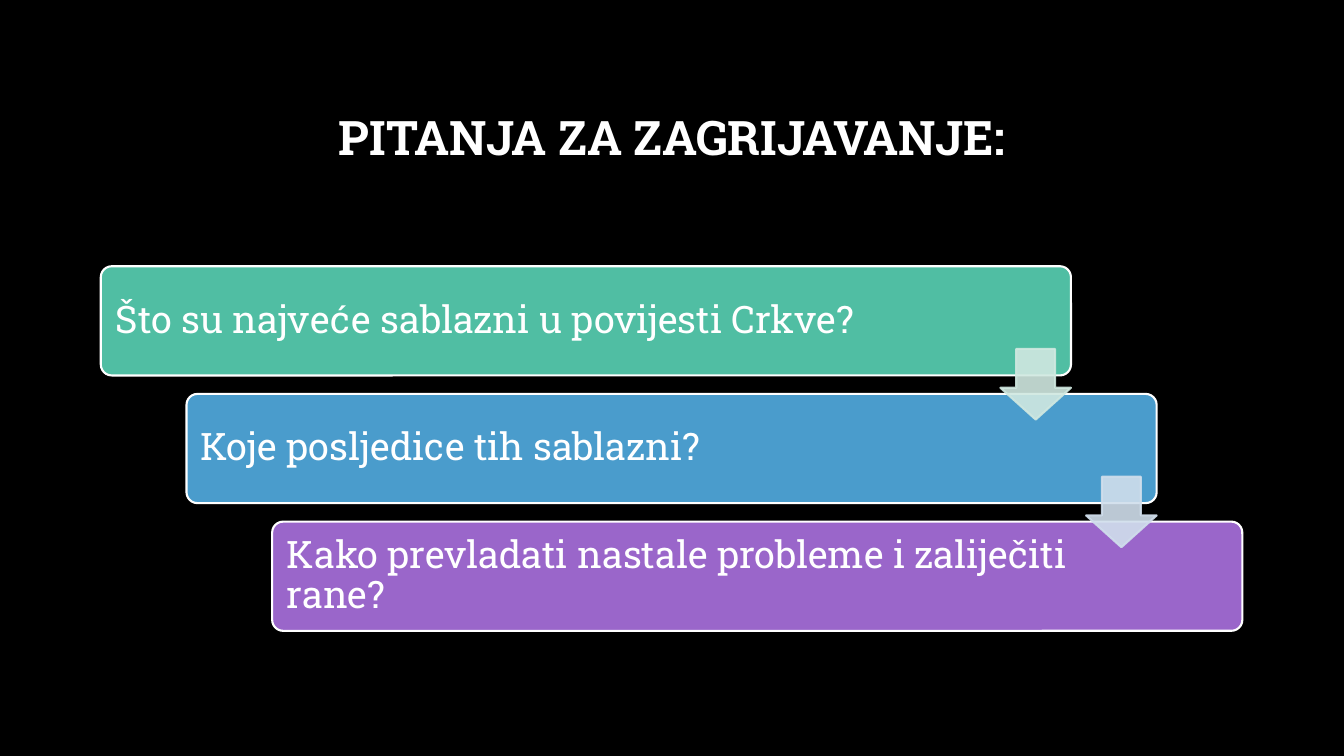
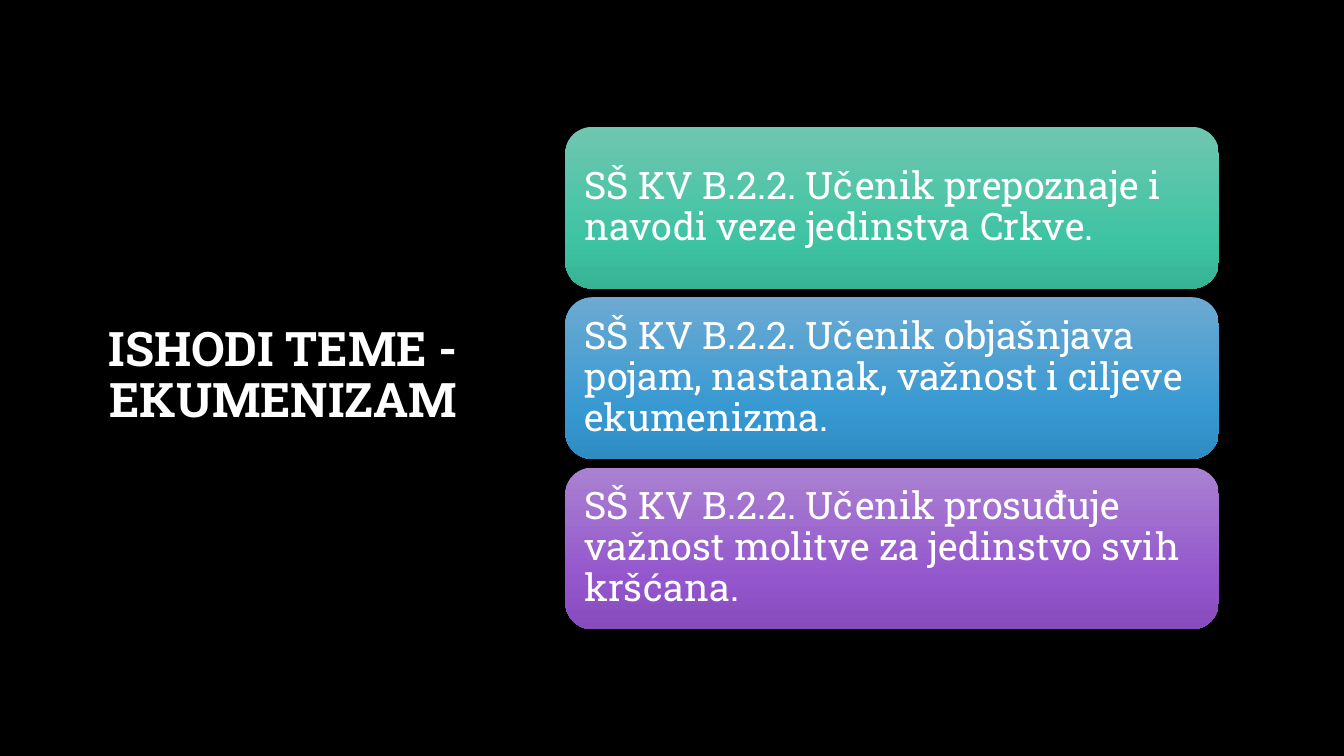
from copy import deepcopy
from dataclasses import dataclass

from lxml import etree
from pptx import Presentation
from pptx.dml.color import RGBColor
from pptx.enum.shapes import MSO_SHAPE
from pptx.enum.text import MSO_ANCHOR, PP_ALIGN
from pptx.oxml.ns import qn
from pptx.shapes.autoshape import Shape
from pptx.slide import Slide
from pptx.util import Inches, Pt

FONT = "Roboto Slab"
TITLE_SIZE, BODY_SIZE = Pt(34), Pt(27)
COLS, ROWS = 160, 90
SLIDE_W, SLIDE_H = Inches(13.33), Inches(7.5)
COL, ROW = SLIDE_W / COLS, SLIDE_H / ROWS
CARD_INSET = Pt(8)

COLORS = {
    "background": "000000", "text": "FFFFFF", "outline": "FFFFFF",
    "green": "50BEA3", "blue": "4A9CCC", "purple": "9A66CA",
    "pale green": "D0E8E0", "pale blue": "D0DEEC",
    "green top": "70C6AF", "green middle": "3EC4A3", "green bottom": "37B395",
    "blue top": "6DAAD2", "blue middle": "3799D2", "blue bottom": "2F8CC2",
    "purple top": "A981D1", "purple middle": "9456CD", "purple bottom": "864BBC",
}
GRADIENT_STOPS = {"top": 0, "middle": 0.69, "bottom": 1}


@dataclass(frozen=True)
class Box:
    """A rectangle in grid columns and rows."""
    x: float
    y: float
    w: float
    h: float

    def step(self, i: int, dx: float, dy: float) -> "Box":
        return Box(self.x + i * dx, self.y + i * dy, self.w, self.h)

    def emu(self) -> tuple[int, int, int, int]:
        return (round(self.x * COL), round(self.y * ROW),
                round(self.w * COL), round(self.h * ROW))


@dataclass(frozen=True)
class Card:
    text: str
    color: str


QUESTIONS = [
    Card("Što su najveće sablazni u povijesti Crkve?", "green"),
    Card("Koje posljedice tih sablazni?", "blue"),
    Card("Kako prevladati nastale probleme i zaliječiti rane?", "purple"),
]
OUTCOMES = [
    Card("SŠ KV B.2.2. Učenik prepoznaje i navodi veze jedinstva Crkve.", "green"),
    Card("SŠ KV B.2.2. Učenik objašnjava pojam, nastanak, važnost i ciljeve "
         "ekumenizma.", "blue"),
    Card("SŠ KV B.2.2. Učenik prosuđuje važnost molitve za jedinstvo svih "
         "kršćana.", "purple"),
]


def rgb(name: str) -> RGBColor:
    return RGBColor.from_string(COLORS[name])


def write(sp: Shape, text: str, size: Pt, align: PP_ALIGN, bold: bool = False) -> None:
    tf = sp.text_frame
    tf.word_wrap = True
    tf.vertical_anchor = MSO_ANCHOR.MIDDLE
    p = tf.paragraphs[0]
    p.text = text
    p.alignment = align
    p.line_spacing = 0.9
    p.font.name, p.font.size, p.font.bold = FONT, size, bold
    p.font.color.rgb = rgb("text")


def add_title(s: Slide, text: str, box: Box) -> None:
    write(s.shapes.add_textbox(*box.emu()), text, TITLE_SIZE, PP_ALIGN.CENTER, True)


def add_shape(s: Slide, kind: MSO_SHAPE, box: Box, *adjustments: float) -> Shape:
    sp = s.shapes.add_shape(kind, *box.emu())
    sp.shadow.inherit = False
    for i, value in enumerate(adjustments):
        sp.adjustments[i] = value
    return sp


def paint(sp: Shape, fill: str, line: str) -> None:
    sp.fill.solid()
    sp.fill.fore_color.rgb = rgb(fill)
    sp.line.color.rgb = rgb(line)
    sp.line.width = Pt(1.5)


def paint_gradient(sp: Shape, color: str) -> None:
    """Fill downwards with the three shades of a colour, without outline."""
    sp.line.fill.background()
    sp.fill.gradient()
    sp.fill.gradient_angle = 270
    stop_list = next(sp._element.spPr.iter(qn("a:gsLst")))
    stop_list.append(deepcopy(stop_list[-1]))
    for stop, (shade, position) in zip(sp.fill.gradient_stops, GRADIENT_STOPS.items()):
        stop.color.rgb = rgb(f"{color} {shade}")
        stop.position = position


def set_opacity(sp: Shape, percent: int) -> None:
    for color in sp._element.spPr.iter(qn("a:srgbClr")):
        etree.SubElement(color, qn("a:alpha"), val=str(percent * 1000))


def write_card(sp: Shape, text: str, right_inset: int = CARD_INSET) -> None:
    write(sp, text, BODY_SIZE, PP_ALIGN.LEFT)
    tf = sp.text_frame
    tf.margin_left = tf.margin_top = tf.margin_bottom = CARD_INSET
    tf.margin_right = right_inset


def build_questions(s: Slide) -> None:
    add_title(s, "PITANJA ZA ZAGRIJAVANJE:", Box(12, 8, 136, 17.4))
    first, dx, dy = Box(12, 31.7, 115.5, 13), 10.2, 15.2
    arrow_size = 8.4
    first_arrow = Box(first.x + first.w - arrow_size, first.y + 9.85,
                      arrow_size, arrow_size)
    for i, card in enumerate(QUESTIONS):
        sp = add_shape(s, MSO_SHAPE.ROUNDED_RECTANGLE, first.step(i, dx, dy), 0.1)
        paint(sp, card.color, "outline")
        write_card(sp, card.text, round(20 * COL))
    for i, card in enumerate(QUESTIONS[:-1]):
        sp = add_shape(s, MSO_SHAPE.DOWN_ARROW, first_arrow.step(i, dx, dy), 0.55, 0.45)
        pale = f"pale {card.color}"
        paint(sp, pale, pale)
        set_opacity(sp, 90)


def build_outcomes(s: Slide) -> None:
    add_title(s, "ISHODI TEME - EKUMENIZAM", Box(9.8, 8, 47.8, 73.6))
    first = Box(67.3, 15.1, 77.8, 19.25)
    for i, card in enumerate(OUTCOMES):
        sp = add_shape(s, MSO_SHAPE.ROUNDED_RECTANGLE, first.step(i, 0, 20.28))
        paint_gradient(sp, card.color)
        write_card(sp, card.text)


def main() -> None:
    prs = Presentation()
    prs.slide_width, prs.slide_height = SLIDE_W, SLIDE_H
    background = prs.slide_master.background.fill
    background.solid()
    background.fore_color.rgb = rgb("background")
    blank = prs.slide_layouts[6]
    for build in (build_questions, build_outcomes):
        build(prs.slides.add_slide(blank))
    prs.save("out.pptx")


if __name__ == "__main__":
    main()
